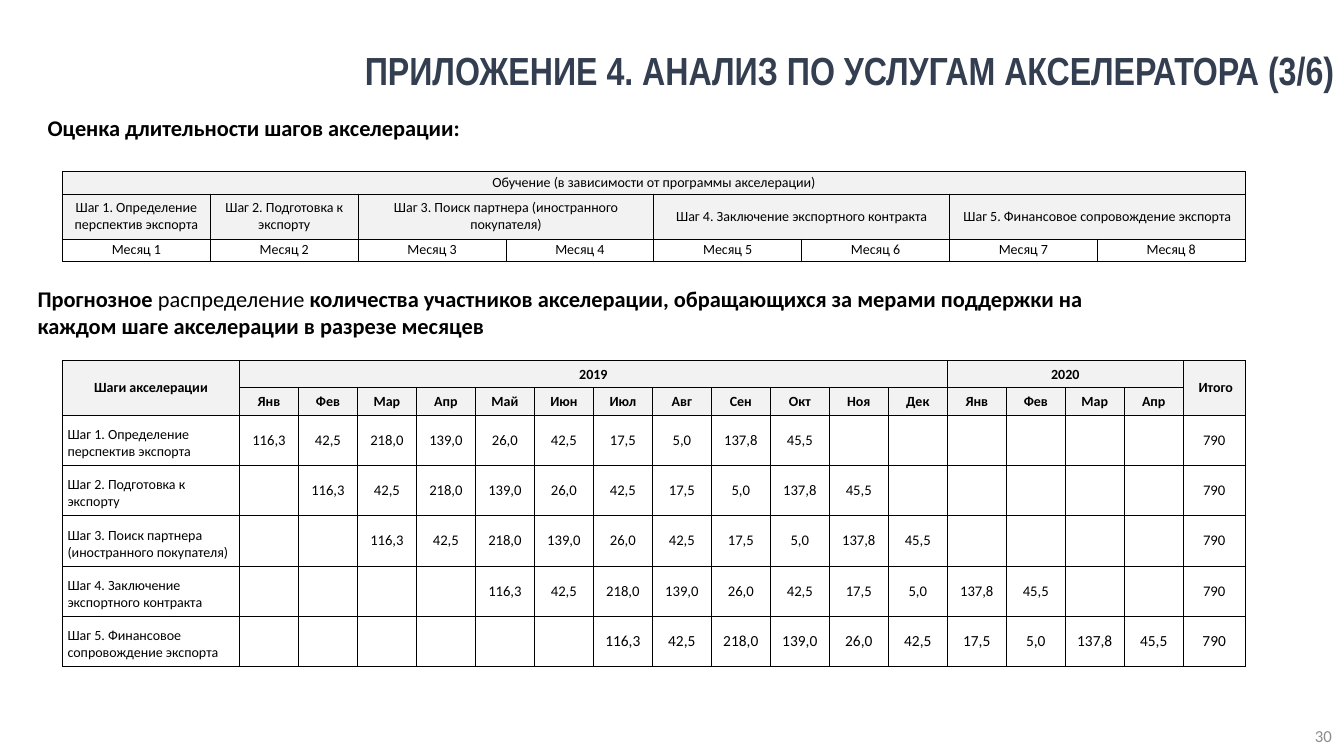
import lxml.etree
import pptx
import pptx.dml.color
import pptx.enum.text
import pptx.oxml.ns
import pptx.util

ALIGN = pptx.enum.text.PP_ALIGN
ANCHOR = pptx.enum.text.MSO_ANCHOR
INK = "000000"
HEADER_FILL = "F2F2F2"
SIDES = ("left", "top", "right", "bottom")
VALUES = "116,3 42,5 218,0 139,0 26,0 42,5 17,5 5,0 137,8 45,5".split()
MONTHS = "Янв Фев Мар Апр Май Июн Июл Авг Сен Окт Ноя Дек".split()
STEPS = (
    ("Шаг 1. Определение перспектив экспорта", 0, 1),
    ("Шаг 2. Подготовка к экспорту", 1, 1),
    ("Шаг 3. Поиск партнера (иностранного покупателя)", 2, 2),
    ("Шаг 4. Заключение экспортного контракта", 4, 2),
    ("Шаг 5. Финансовое сопровождение экспорта", 6, 2),
)


def color(hex_text):
    return pptx.dml.color.RGBColor.from_string(hex_text)


def apply(target, formats):
    for name, value in formats.items():
        setattr(target, name, value)


def place(deck, left, top, width, height):
    across, down = deck.slide_width / 100, deck.slide_height / 100
    return [round(length) for length in
            (left * across, top * down, width * across, height * down)]


def write_spans(frame, spans, align, size, font="Calibri", ink=INK, spacing=None):
    para = frame.paragraphs[0]
    apply(para, {"alignment": align, "line_spacing": spacing})
    for text, bold in spans:
        span = para.add_run()
        span.text = text
        apply(span.font, {"size": pptx.util.Pt(size), "name": font, "bold": bold})
        span.font.color.rgb = color(ink)


def add_text(page, box, spans, align=ALIGN.LEFT, anchor=ANCHOR.TOP, inset=0.1, **style):
    frame = page.shapes.add_textbox(*box).text_frame
    apply(frame, {"word_wrap": True, "vertical_anchor": anchor,
                  "margin_left": pptx.util.Inches(inset)})
    write_spans(frame, spans, align, **style)


def add_grid(page, box, columns, rows):
    table = page.shapes.add_table(len(rows), len(columns), *box).table
    apply(table, {"first_row": False, "horz_banding": False})
    for column, share in zip(table.columns, columns):
        column.width = round(box[2] * share / sum(columns))
    for row, share in zip(table.rows, rows):
        row.height = round(box[3] * share / sum(rows))
    for cell in table.iter_cells():
        format_cell(cell)
    return table


def format_cell(cell):
    qualify = pptx.oxml.ns.qn
    apply(cell, {f"margin_{side}": 0 for side in SIDES})
    properties = cell._tc.get_or_add_tcPr()
    for side in "LRTB":
        line = lxml.etree.SubElement(properties, qualify(f"a:ln{side}"), w="6350")
        fill = lxml.etree.SubElement(line, qualify("a:solidFill"))
        lxml.etree.SubElement(fill, qualify("a:srgbClr"), val=INK)
    cell.fill.background()
    para = cell.text_frame.paragraphs[0]._p
    lxml.etree.SubElement(para, qualify("a:endParaRPr"), sz="1000")


def fill_cell(table, row, column, text, size=10, bold=False, header=False, span=(1, 1),
              inset=0, align=ALIGN.CENTER, anchor=ANCHOR.MIDDLE):
    cell = table.cell(row, column)
    if span != (1, 1):
        cell.merge(table.cell(row + span[0] - 1, column + span[1] - 1))
    apply(cell, {f"margin_{side}": pptx.util.Inches(inset) for side in SIDES})
    cell.vertical_anchor = anchor
    if header:
        cell.fill.solid()
        cell.fill.fore_color.rgb = color(HEADER_FILL)
    write_spans(cell.text_frame, [(text, bold)], align, size)


def add_duration_table(page, box):
    table = add_grid(page, box, [1] * 8, [1, 2, 1])
    fill_cell(table, 0, 0, "Обучение (в зависимости от программы акселерации)",
              header=True, span=(1, 8))
    for name, start, length in STEPS:
        fill_cell(table, 1, start, name, header=True, span=(1, length))
    for month in range(8):
        fill_cell(table, 2, month, f"Месяц {month + 1}")


def add_forecast_table(page, box):
    table = add_grid(page, box, [3] + [1] * 16 + [1.05], [27] * 2 + [50] * 5)
    heading = {"bold": True, "header": True, "inset": 0.05}
    fill_cell(table, 0, 0, "Шаги акселерации", span=(2, 1), **heading)
    fill_cell(table, 0, 1, "2019", span=(1, 12), anchor=ANCHOR.BOTTOM, **heading)
    fill_cell(table, 0, 13, "2020", span=(1, 4), anchor=ANCHOR.BOTTOM, **heading)
    fill_cell(table, 0, 17, " Итого", span=(2, 1), **heading)
    for column, month in enumerate(MONTHS + MONTHS[:4], 1):
        fill_cell(table, 1, column, month, **heading)
    for row, (name, start, length) in enumerate(STEPS, 2):
        size = 11 if name == STEPS[-1][0] else 10.5
        fill_cell(table, row, 0, name, inset=0.05, align=ALIGN.LEFT, anchor=ANCHOR.BOTTOM)
        for column, value in enumerate(VALUES, start + 1):
            fill_cell(table, row, column, value, size=size)
        fill_cell(table, row, 17, "790", size=size)


def add_appendix_page(deck):
    page = deck.slides.add_slide(deck.slide_layouts[6])
    add_text(page, place(deck, 26.4, 6.3, 73.6, 6.6),
             [("ПРИЛОЖЕНИЕ 4. АНАЛИЗ ПО УСЛУГАМ АКСЕЛЕРАТОРА (3/6)", True)],
             ALIGN.RIGHT, ANCHOR.MIDDLE, size=28, font="Arial Narrow",
             ink="333F50", spacing=0.9)
    add_text(page, place(deck, 2.8, 14.8, 83.8, 5.6),
             [("Оценка длительности шагов акселерации:", True)], size=16, spacing=0.9)
    add_duration_table(page, place(deck, 4.65, 22.67, 88, 11.9))
    add_text(page, place(deck, 2.8, 37.07, 83.8, 8.4),
             [("Прогнозное ", True), ("распределение", False),
              (" количества участников акселерации, обращающихся за мерами поддержки "
               "на каждом шаге акселерации в разрезе месяцев", True)], inset=0, size=16)
    add_forecast_table(page, place(deck, 4.65, 47.7, 88, 40.5))
    add_text(page, place(deck, 77.34, 94.67, 22.5, 5.33), [("30", False)],
             ALIGN.RIGHT, ANCHOR.MIDDLE, size=12, ink="8C8C8C")


def main():
    deck = pptx.Presentation()
    apply(deck, {"slide_width": pptx.util.Inches(13.33),
                 "slide_height": pptx.util.Inches(7.5)})
    add_appendix_page(deck)
    deck.save("out.pptx")


if __name__ == "__main__":
    main()
